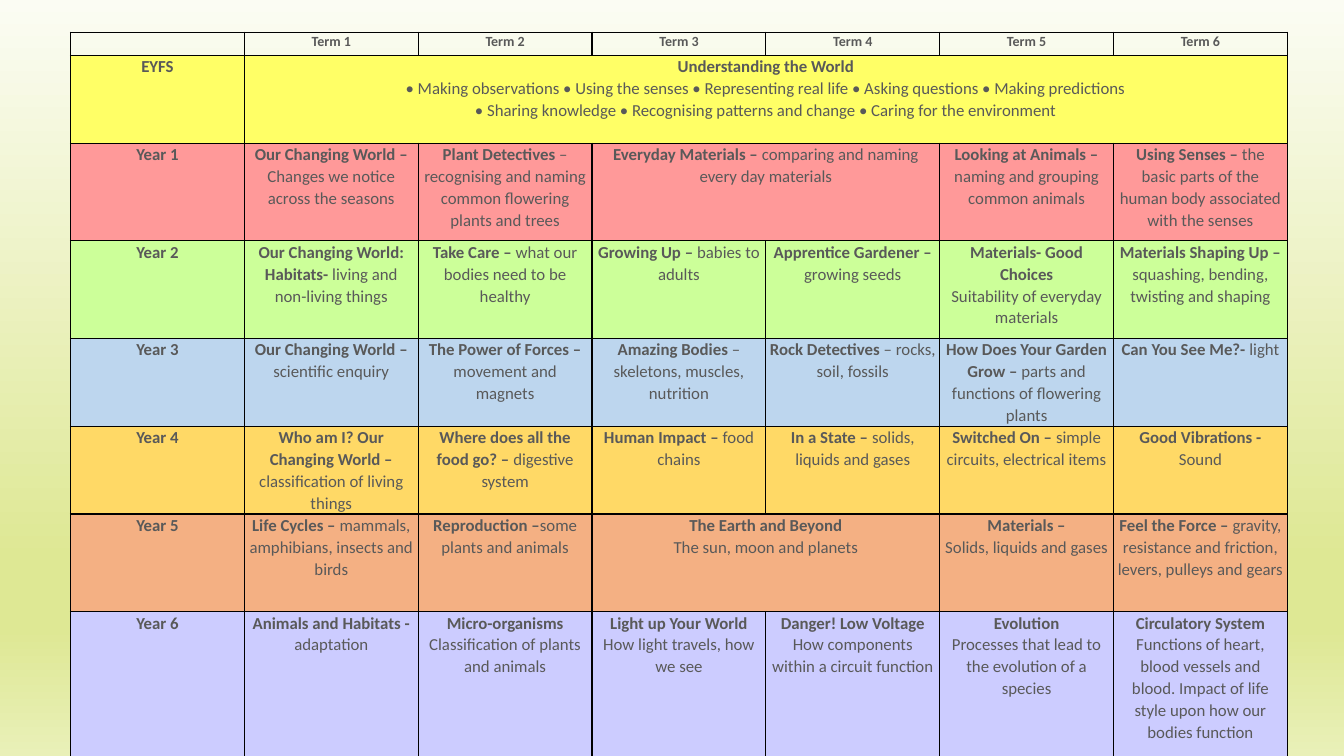
"""Build a science curriculum grid by year and term."""
from dataclasses import dataclass

from lxml.etree import SubElement as Sub
from pptx import Presentation
from pptx.dml.color import RGBColor as Rgb
from pptx.enum.text import PP_ALIGN as Align
from pptx.oxml.ns import qn
from pptx.slide import Slide
from pptx.table import Table, _Cell as Cell
from pptx.util import Inches, Pt

HUES = {
    "text": "595959", "line": "000000",
    "pale": "FBFCF3", "lime": "DEE894", "soft": "E9F0B8",
    "yellow": "FFFF66", "red": "FF9999", "green": "CCFF99",
    "blue": "BDD6EE", "gold": "FFD966", "orange": "F4B083",
    "violet": "CCCCFF",
}
STOPS = ((0, "pale"), (74, "lime"), (83, "lime"), (100, "soft"))
FONT = "Calibri"
LEFT, TOP, WIDE = 0.7, 0.32, 12.07
COLS = 7


@dataclass
class Unit:
    """A bold topic, the text after it, and the terms it spans."""
    head: str
    body: str = ""
    span: int = 1


@dataclass
class Band:
    """One row of the grid."""
    name: str
    hue: str
    high: float
    units: list[Unit]
    size: int = 12


BANDS = [
    Band("", "", 0.23, [Unit(f"Term {n}") for n in range(1, COLS)], 10),
    Band("EYFS", "yellow", 0.87, [
        Unit("Understanding the World",
             "\n• Making observations • Using the senses • Representing real life"
             " • Asking questions • Making predictions"
             "\n• Sharing knowledge • Recognising patterns and change"
             " • Caring for the environment", 6),
    ]),
    Band("Year 1", "red", 0.97, [
        Unit("Our Changing World – ", "Changes we notice across the seasons"),
        Unit("Plant Detectives ",
             "– recognising and naming common flowering plants and trees"),
        Unit("Everyday Materials – ",
             "comparing and naming every day materials", 2),
        Unit("Looking at Animals – ", "naming and grouping common animals"),
        Unit("Using Senses – ",
             "the basic parts of the human body associated with the senses"),
    ]),
    Band("Year 2", "green", 0.97, [
        Unit("Our Changing World: Habitats-", " living and non-living things"),
        Unit("Take Care – ", "what our bodies need to be healthy"),
        Unit("Growing Up – ", "babies to adults"),
        Unit("Apprentice Gardener –", "growing seeds"),
        Unit("Materials- Good Choices", "\nSuitability of everyday materials"),
        Unit("Materials Shaping Up –",
             "squashing, bending, twisting and shaping"),
    ]),
    Band("Year 3", "blue", 0.87, [
        Unit("Our Changing World – ", "scientific enquiry"),
        Unit("The Power of Forces – ", "movement and magnets"),
        Unit("Amazing Bodies ", "– skeletons, muscles, nutrition"),
        Unit("Rock Detectives ", "– rocks, soil, fossils"),
        Unit("How Does Your Garden Grow – ",
             "parts and functions of flowering plants"),
        Unit("Can You See Me?- ", "light"),
    ]),
    Band("Year 4", "gold", 0.87, [
        Unit("Who am I? Our Changing World –",
             "classification of living things"),
        Unit("Where does all the food go? – ", "digestive system"),
        Unit("Human Impact – ", "food chains"),
        Unit("In a State – ", "solids, liquids and gases"),
        Unit("Switched On – ", "simple circuits, electrical items"),
        Unit("Good Vibrations - ", "Sound"),
    ]),
    Band("Year 5", "orange", 0.97, [
        Unit("Life Cycles – ", "mammals, amphibians, insects and birds"),
        Unit("Reproduction –", "some plants and animals"),
        Unit("The Earth and Beyond", "\nThe sun, moon and planets", 2),
        Unit("Materials –", "\nSolids, liquids and gases"),
        Unit("Feel the Force – ",
             "gravity, resistance and friction, levers, pulleys and gears"),
    ]),
    Band("Year 6", "violet", 1.45, [
        Unit("Animals and Habitats - ", "adaptation"),
        Unit("Micro-organisms", "\nClassification of plants and animals"),
        Unit("Light up Your World", "\nHow light travels, how we see"),
        Unit("Danger! Low Voltage",
             "\nHow components within a circuit function"),
        Unit("Evolution",
             "\nProcesses that lead to the evolution of a species"),
        Unit("Circulatory System",
             "\nFunctions of heart, blood vessels and blood. Impact of life"
             " style upon how our bodies function"),
    ]),
]


def shade(slide: Slide) -> None:
    """Fill the background with a vertical gradient."""
    fill = slide.background.fill
    fill.gradient()
    fill.gradient_angle = 270
    stops = slide.element.find(".//" + qn("a:gsLst"))
    for old in list(stops):
        stops.remove(old)
    for at, hue in STOPS:
        stop = Sub(stops, qn("a:gs"), pos=str(at * 1000))
        Sub(stop, qn("a:srgbClr"), val=HUES[hue])


def frame(cell: Cell, hue: str) -> None:
    """Set the borders, fill and margins of a cell."""
    props = cell._tc.get_or_add_tcPr()
    for side in "LRTB":
        line = Sub(props, qn(f"a:ln{side}"), w=str(Pt(1)))
        Sub(Sub(line, qn("a:solidFill")), qn("a:srgbClr"), val=HUES["line"])
    if hue:
        cell.fill.solid()
        cell.fill.fore_color.rgb = Rgb.from_string(HUES[hue])
    else:
        cell.fill.background()
    cell.margin_left = cell.margin_right = Inches(0.04)
    cell.margin_top = cell.margin_bottom = 0


def write(cell: Cell, unit: Unit, size: int) -> None:
    """Write a unit into a cell, run by run."""
    text = cell.text_frame
    for row, body in enumerate(unit.body.split("\n")):
        para = text.add_paragraph() if row else text.paragraphs[0]
        para.alignment = Align.CENTER
        para.line_spacing = 1.07
        parts = ((unit.head if row == 0 else "", True), (body, False))
        for words, bold in parts:
            if words:
                run = para.add_run()
                run.text = words
                font = run.font
                font.name, font.size, font.bold = FONT, Pt(size), bold
                font.color.rgb = Rgb.from_string(HUES["text"])
        if not para.runs:
            Sub(para._p, qn("a:endParaRPr"), sz=str(size * 100))


def draw(grid: Table, row: int, band: Band) -> None:
    """Draw one band of the grid."""
    grid.rows[row].height = Inches(band.high)
    for col in range(COLS):
        frame(grid.cell(row, col), band.hue)
    col = 0
    for unit in [Unit(band.name), *band.units]:
        cell = grid.cell(row, col)
        if unit.span > 1:
            cell.merge(grid.cell(row, col + unit.span - 1))
        write(cell, unit, band.size)
        col += unit.span


def main() -> None:
    """Build and save the slide."""
    deck = Presentation()
    deck.slide_width, deck.slide_height = Inches(13.33), Inches(7.5)
    slide = deck.slides.add_slide(deck.slide_layouts[6])
    shade(slide)
    high = sum(band.high for band in BANDS)
    grid = slide.shapes.add_table(
        len(BANDS), COLS, Inches(LEFT), Inches(TOP),
        Inches(WIDE), Inches(high)).table
    grid.first_row = grid.horz_banding = False
    for row, band in enumerate(BANDS):
        draw(grid, row, band)
    deck.save("out.pptx")


if __name__ == "__main__":
    main()
